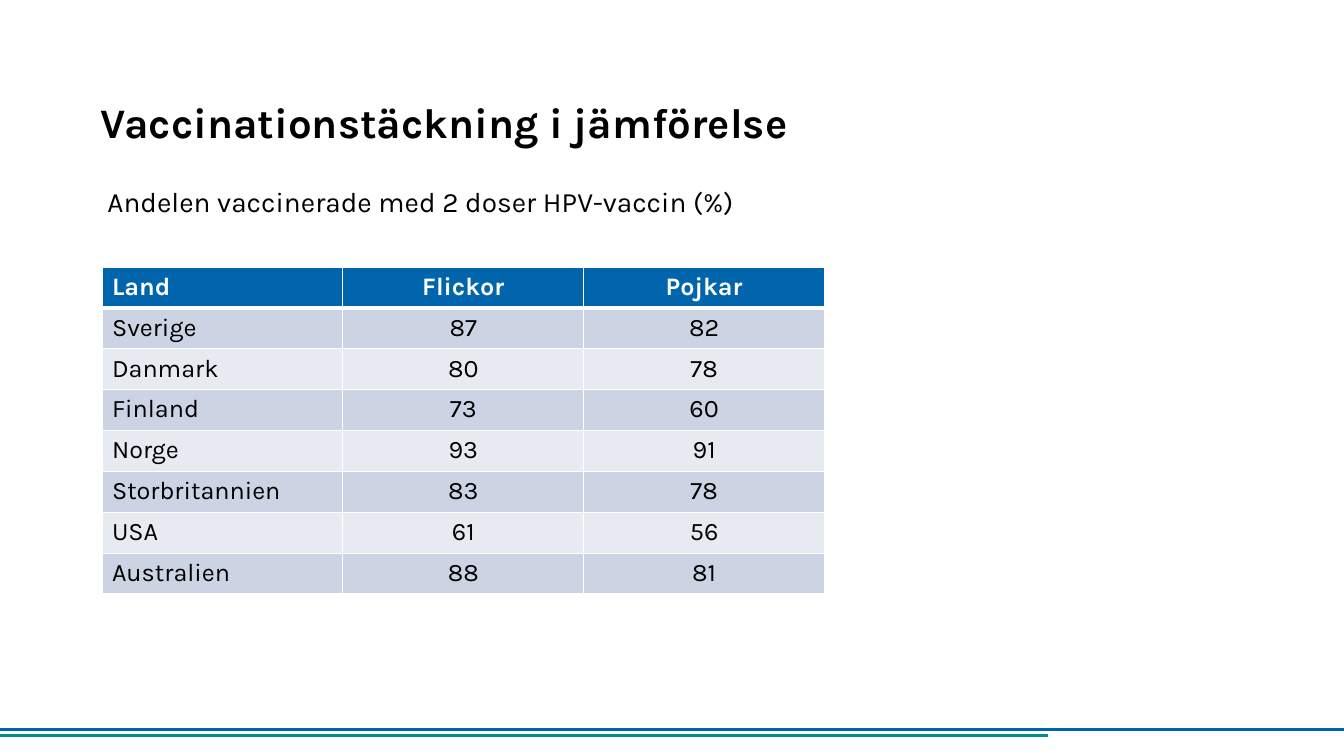
from dataclasses import dataclass
from lxml.etree import SubElement
from pptx import Presentation
from pptx.dml.color import RGBColor
from pptx.enum.shapes import MSO_CONNECTOR
from pptx.enum.text import MSO_ANCHOR, MSO_AUTO_SIZE, PP_ALIGN
from pptx.oxml.ns import qn
from pptx.util import Cm, Pt

HEADING = "Vaccinationstäckning i jämförelse"
SUBHEADING = "Andelen vaccinerade med 2 doser HPV-vaccin (%)"
COVERAGE = [
    ("Land", "Flickor", "Pojkar"),
    ("Sverige", 87, 82),
    ("Danmark", 80, 78),
    ("Finland", 73, 60),
    ("Norge", 93, 91),
    ("Storbritannien", 83, 78),
    ("USA", 61, 56),
    ("Australien", 88, 81),
]
FOOTER_RULES = [(18.39, 33.87, "0065AC"), (18.53, 26.4, "009185")]


@dataclass(frozen=True)
class Theme:
    font: str = "Karla"
    ink: str = "000000"
    paper: str = "FFFFFF"
    header: str = "0065AC"
    bands: tuple = ("CCD3E3", "E7EAF1")
    heading_size: int = 30
    subheading_size: int = 20
    table_size: int = 18
    heading_leading: int = 34
    rule_width: int = 2
    border_width: int = 1
    header_border_width: int = 3


THEME = Theme()


def write(frame, text, size, color=THEME.ink, bold=False, align=PP_ALIGN.LEFT, leading=None):
    paragraph = frame.paragraphs[0]
    paragraph.alignment = align
    if leading:
        paragraph.line_spacing = Pt(leading)
    run = paragraph.add_run()
    run.text = str(text)
    run.font.name = THEME.font
    run.font.size = Pt(size)
    run.font.bold = bold
    run.font.color.rgb = RGBColor.from_string(color)


def add_rule(slide, top, length, color):
    rule = slide.shapes.add_connector(MSO_CONNECTOR.STRAIGHT, 0, Cm(top), Cm(length), Cm(top))
    rule.line.color.rgb = RGBColor.from_string(color)
    rule.line.width = Pt(THEME.rule_width)
    SubElement(rule._element.spPr, qn("a:effectLst"))


def style_cell(cell, fill, bottom_width, top_width):
    properties = cell._tc.get_or_add_tcPr()
    side = THEME.border_width
    for edge, width in (("L", side), ("R", side), ("T", top_width), ("B", bottom_width)):
        border = SubElement(properties, qn(f"a:ln{edge}"), w=str(Pt(width)))
        SubElement(SubElement(border, qn("a:solidFill")), qn("a:srgbClr"), val=THEME.paper)
    cell.fill.solid()
    cell.fill.fore_color.rgb = RGBColor.from_string(fill)


def add_heading(slide):
    heading = slide.shapes.title
    heading.left, heading.top, heading.width, heading.height = Cm(2.54), Cm(1.12), Cm(28.8), Cm(2.59)
    frame = heading.text_frame
    frame.margin_left = frame.margin_top = frame.margin_right = frame.margin_bottom = 0
    frame.vertical_anchor = MSO_ANCHOR.BOTTOM
    frame.auto_size = MSO_AUTO_SIZE.NONE
    write(frame, HEADING, THEME.heading_size, bold=True, leading=THEME.heading_leading)


def add_coverage(slide):
    row_count, column_count = len(COVERAGE), len(COVERAGE[0])
    row_height, column_width = Cm(1.03), Cm(6.07)
    table = slide.shapes.add_table(
        row_count, column_count, Cm(2.57), Cm(6.73),
        column_width * column_count, row_height * row_count,
    ).table
    for column in table.columns:
        column.width = column_width
    for row_index, record in enumerate(COVERAGE):
        table.rows[row_index].height = row_height
        is_header = row_index == 0
        fill = THEME.header if is_header else THEME.bands[(row_index - 1) % 2]
        bottom_width = THEME.header_border_width if is_header else THEME.border_width
        top_width = THEME.header_border_width if row_index == 1 else THEME.border_width
        for column_index, entry in enumerate(record):
            cell = table.cell(row_index, column_index)
            style_cell(cell, fill, bottom_width, top_width)
            write(
                cell.text_frame, entry, THEME.table_size,
                color=THEME.paper if is_header else THEME.ink,
                bold=is_header,
                align=PP_ALIGN.CENTER if column_index else PP_ALIGN.LEFT,
            )


def add_subheading(slide):
    subheading = slide.shapes.add_textbox(Cm(2.46), Cm(4.52), Cm(20.4), Cm(1.12))
    subheading.text_frame.word_wrap = True
    subheading.text_frame.auto_size = MSO_AUTO_SIZE.SHAPE_TO_FIT_TEXT
    write(subheading.text_frame, SUBHEADING, THEME.subheading_size)


def main():
    deck = Presentation()
    deck.slide_width, deck.slide_height = Cm(33.87), Cm(19.05)
    slide = deck.slides.add_slide(deck.slide_layouts[5])
    for top, length, color in FOOTER_RULES:
        add_rule(slide, top, length, color)
    add_heading(slide)
    add_coverage(slide)
    add_subheading(slide)
    deck.save("out.pptx")


if __name__ == "__main__":
    main()
